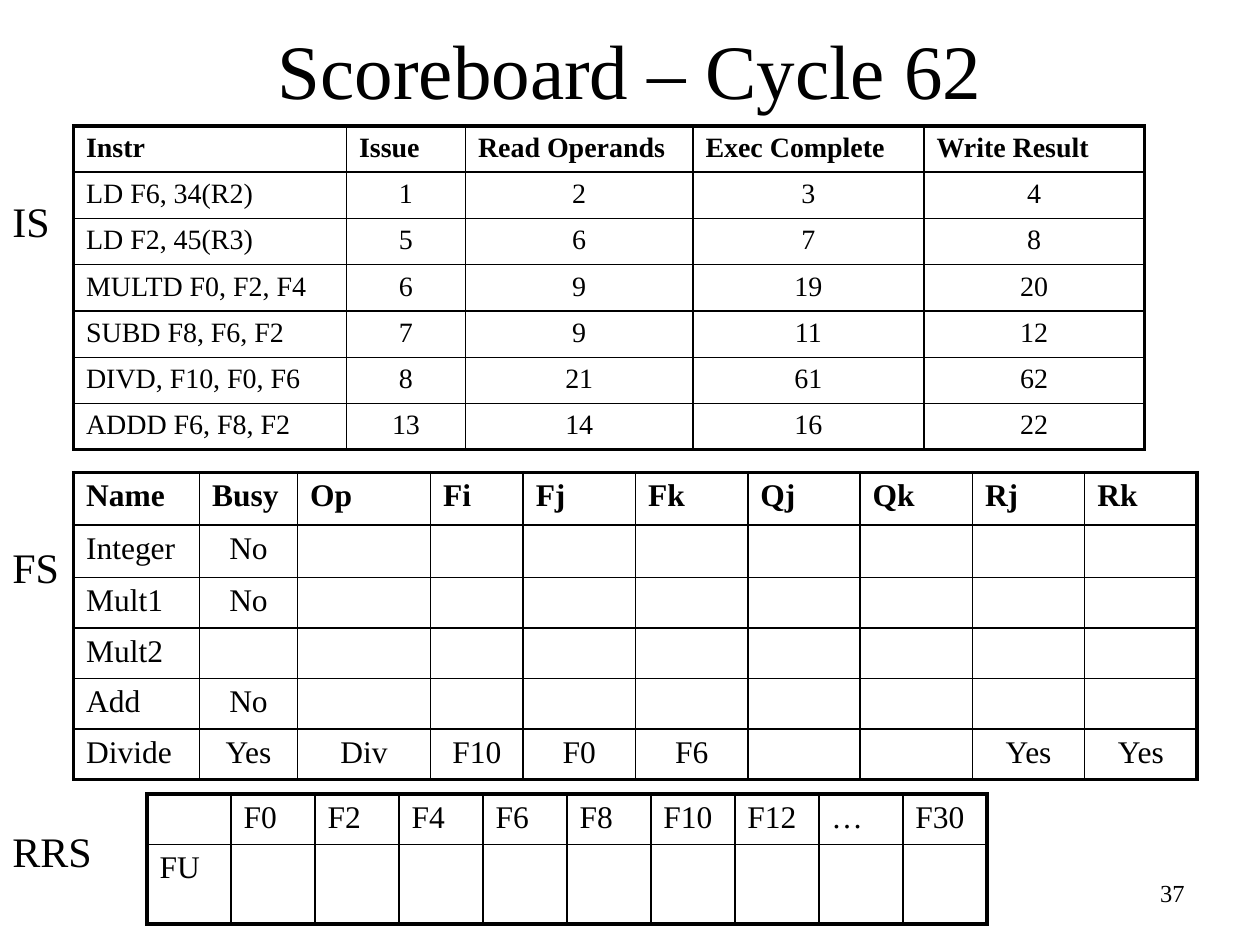
import pptx
import pptx.util
import pptx.dml.color
import pptx.enum.text
import pptx.oxml
import pptx.oxml.ns

Pt = pptx.util.Pt
ALIGN = pptx.enum.text.PP_ALIGN
ANCHOR = pptx.enum.text.MSO_ANCHOR
INK = "000000"


def color(value):
    return pptx.dml.color.RGBColor.from_string(value)


def write(frame, text, size, align=ALIGN.LEFT, bold=False):
    paragraph = frame.paragraphs[0]
    paragraph.text = text
    paragraph.alignment = align
    paragraph.font.name = "Times New Roman"
    paragraph.font.size = Pt(size)
    paragraph.font.bold = bold
    paragraph.font.color.rgb = color(INK)


presentation = pptx.Presentation()
presentation.slide_width = Pt(720)
presentation.slide_height = Pt(540)
slide = presentation.slides.add_slide(presentation.slide_layouts[6])

captions = [
    ("37", 534, 498, 150, 36, 14, ALIGN.RIGHT, ANCHOR.TOP, True),
    ("Scoreboard – Cycle 62", 54, -6, 612, 90, 44, ALIGN.CENTER, ANCHOR.MIDDLE, True),
    ("IS", 0, 108, 36, 36, 24, ALIGN.LEFT, ANCHOR.TOP, False),
    ("FS", 0, 306, 41, 36, 24, ALIGN.LEFT, ANCHOR.TOP, False),
    ("RRS", 0, 468, 60, 36, 24, ALIGN.LEFT, ANCHOR.TOP, False),
]
for text, left, top, width, height, size, align, anchor, wrap in captions:
    caption = slide.shapes.add_textbox(Pt(left), Pt(top), Pt(width), Pt(height)).text_frame
    caption.word_wrap = wrap
    caption.vertical_anchor = anchor
    write(caption, text, size, align)

instruction_status = [
    ["Instr", "Issue", "Read Operands", "Exec Complete", "Write Result"],
    ["LD F6, 34(R2)", "1", "2", "3", "4"],
    ["LD F2, 45(R3)", "5", "6", "7", "8"],
    ["MULTD F0, F2, F4", "6", "9", "19", "20"],
    ["SUBD F8, F6, F2", "7", "9", "11", "12"],
    ["DIVD, F10, F0, F6", "8", "21", "61", "62"],
    ["ADDD F6, F8, F2", "13", "14", "16", "22"],
]
unit_status = [
    ["Name", "Busy", "Op", "Fi", "Fj", "Fk", "Qj", "Qk", "Rj", "Rk"],
    ["Integer", "No"] + [""] * 8,
    ["Mult1", "No"] + [""] * 8,
    ["Mult2"] + [""] * 9,
    ["Add", "No"] + [""] * 8,
    ["Divide", "Yes", "Div", "F10", "F0", "F6", "", "", "Yes", "Yes"],
]
register_status = [
    ["", "F0", "F2", "F4", "F6", "F8", "F10", "F12", "…", "F30"],
    ["FU"] + [""] * 9,
]
tables = [
    (instruction_status, 42, 72, [156, 68, 130, 132, 126],
     [25, 25, 25, 26.5, 25, 25, 25], 16, True),
    (unit_status, 42, 270, [72, 56, 76, 53] + [64.2] * 6,
     [30, 30, 27.2, 27.2, 27.2, 27.2], 18, True),
    (register_status, 84, 453.6, [48] * 10, [27.2, 45.6], 18, False),
]

for entries, left, top, widths, heights, size, bold_header in tables:
    last_row, last_column = len(heights) - 1, len(widths) - 1
    table = slide.shapes.add_table(
        len(heights), len(widths), Pt(left), Pt(top), Pt(sum(widths)), Pt(sum(heights))
    ).table
    table.first_row = False
    table.horz_banding = False
    for column, width in zip(table.columns, widths):
        column.width = Pt(width)
    for r, height in enumerate(heights):
        table.rows[r].height = Pt(height)
        for c, text in enumerate(entries[r]):
            cell = table.cell(r, c)
            centred = r > 0 and c > 0
            write(cell.text_frame, text, size,
                  ALIGN.CENTER if centred else ALIGN.LEFT, bold_header and r == 0)
            cell.fill.background()
            properties = cell._tc.get_or_add_tcPr()
            outer_sides = [("lnL", c == 0), ("lnR", c == last_column),
                           ("lnT", r == 0), ("lnB", r == last_row)]
            for position, (side, outer) in enumerate(outer_sides):
                border = pptx.oxml.parse_xml(
                    f'<a:{side} {pptx.oxml.ns.nsdecls("a")} w="{Pt(2.25 if outer else 1)}">'
                    f'<a:solidFill><a:srgbClr val="{INK}"/></a:solidFill></a:{side}>'
                )
                properties.insert(position, border)

presentation.save("out.pptx")
